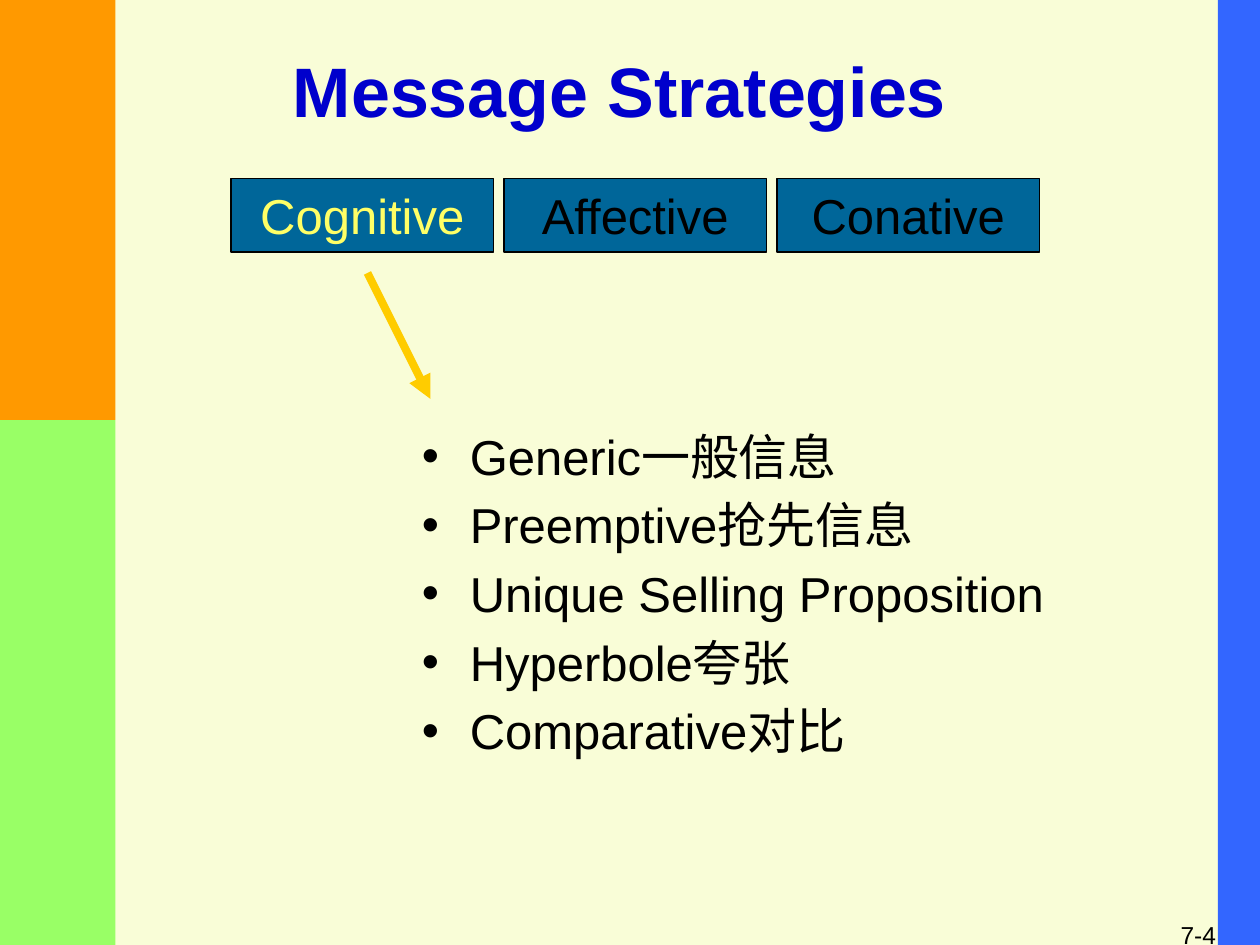
import dataclasses

import pptx
import pptx.dml.color
import pptx.enum.shapes
import pptx.enum.text
import pptx.oxml
import pptx.oxml.ns
import pptx.util
from lxml import etree

COLUMNS, ROWS = 120, 90
UNIT = pptx.util.Inches(10) // COLUMNS
ALIGN = pptx.enum.text.PP_ALIGN
ANCHOR = pptx.enum.text.MSO_ANCHOR


@dataclasses.dataclass(frozen=True)
class Theme:
    font: str = "Arial"
    page: str = "F9FDD7"
    ink: str = "000000"
    title: str = "0000CC"
    tab: str = "006699"
    active: str = "FFFF66"
    arrow: str = "FFCC00"
    orange: str = "FF9900"
    green: str = "99FF66"
    blue: str = "3366FF"
    title_size: int = 40
    body_size: int = 28
    number_size: int = 14


@dataclasses.dataclass(frozen=True)
class Area:
    column: int
    row: int
    columns: int
    rows: int

    def lengths(self) -> tuple[int, ...]:
        return tuple(UNIT * cells for cells in dataclasses.astuple(self))


@dataclasses.dataclass(frozen=True)
class Band:
    area: Area
    color: str


@dataclasses.dataclass(frozen=True)
class Tab:
    label: str
    color: str


THEME = Theme()
BANDS = (
    Band(Area(116, 0, 4, ROWS), THEME.blue),
    Band(Area(0, 0, 11, 40), THEME.orange),
    Band(Area(0, 40, 11, 50), THEME.green),
)
TABS = (
    Tab("Cognitive", THEME.active),
    Tab("Affective", THEME.ink),
    Tab("Conative", THEME.ink),
)
TAB_PITCH = 26
MESSAGES = (
    "Generic一般信息",
    "Preemptive抢先信息",
    "Unique Selling Proposition",
    "Hyperbole夸张",
    "Comparative对比",
)


def rgb(color: str):
    return pptx.dml.color.RGBColor.from_string(color)


def add_bullet(para) -> None:
    properties = para._p.get_or_add_pPr()
    indent = pptx.util.Inches(0.38)
    properties.set("marL", str(indent))
    properties.set("indent", str(-indent))
    namespace = pptx.oxml.ns.nsdecls("a")
    for markup in (
        f'<a:spcBef {namespace}><a:spcPct val="20000"/></a:spcBef>',
        f'<a:buClr {namespace}><a:srgbClr val="{THEME.ink}"/></a:buClr>',
        f'<a:buFont {namespace} typeface="{THEME.font}"/>',
        f'<a:buChar {namespace} char="•"/>',
    ):
        properties.append(pptx.oxml.parse_xml(markup))


def write(box, *lines: str, size: int, color: str = THEME.ink, bold: bool = False,
          align=ALIGN.LEFT, anchor=ANCHOR.MIDDLE, wrap: bool = True,
          bullets: bool = False) -> None:
    frame = box.text_frame
    frame.word_wrap = wrap
    frame.vertical_anchor = anchor
    for index, line in enumerate(lines):
        para = frame.add_paragraph() if index else frame.paragraphs[0]
        para.alignment = align
        if bullets:
            add_bullet(para)
        span = para.add_run()
        span.text = line
        span.font.name = THEME.font
        span.font.size = pptx.util.Pt(size)
        span.font.bold = bold
        span.font.color.rgb = rgb(color)


def add_text(page, area: Area, *lines: str, **style) -> None:
    write(page.shapes.add_textbox(*area.lengths()), *lines, **style)


def add_block(page, area: Area, color: str, outline: str | None = None):
    kind = pptx.enum.shapes.MSO_SHAPE.RECTANGLE
    block = page.shapes.add_shape(kind, *area.lengths())
    block.shadow.inherit = False
    block.fill.solid()
    block.fill.fore_color.rgb = rgb(color)
    if outline:
        block.line.color.rgb = rgb(outline)
        block.line.width = pptx.util.Pt(1)
    else:
        block.line.fill.background()
    return block


def add_arrow(page, start: tuple[int, int], end: tuple[int, int]) -> None:
    kind = pptx.enum.shapes.MSO_CONNECTOR.STRAIGHT
    arrow = page.shapes.add_connector(kind, *(UNIT * cells for cells in start + end))
    arrow.line.color.rgb = rgb(THEME.arrow)
    arrow.line.width = pptx.util.Pt(4.5)
    qualify = pptx.oxml.ns.qn
    etree.SubElement(arrow.line._get_or_add_ln(), qualify("a:tailEnd"), type="triangle")
    etree.SubElement(arrow._element.spPr, qualify("a:effectLst"))


def main() -> None:
    deck = pptx.Presentation()
    deck.slide_width = UNIT * COLUMNS
    deck.slide_height = UNIT * ROWS
    page = deck.slides.add_slide(deck.slide_layouts[6])
    page.background.fill.solid()
    page.background.fill.fore_color.rgb = rgb(THEME.page)

    add_text(page, Area(92, 86, 25, 6), "7-4", size=THEME.number_size, align=ALIGN.RIGHT)
    add_text(page, Area(8, 2, 102, 13), "Message Strategies", size=THEME.title_size,
             color=THEME.title, bold=True, align=ALIGN.CENTER)
    add_text(page, Area(39, 40, 62, 39), *MESSAGES, size=THEME.body_size,
             anchor=ANCHOR.TOP, bullets=True)
    for index, tab in enumerate(TABS):
        area = Area(22 + index * TAB_PITCH, 17, 25, 7)
        write(add_block(page, area, THEME.tab, THEME.ink), tab.label,
              size=THEME.body_size, color=tab.color, align=ALIGN.CENTER, wrap=False)
    add_arrow(page, (35, 26), (41, 38))
    for band in BANDS:
        add_block(page, band.area, band.color)
    deck.save("out.pptx")


if __name__ == "__main__":
    main()
